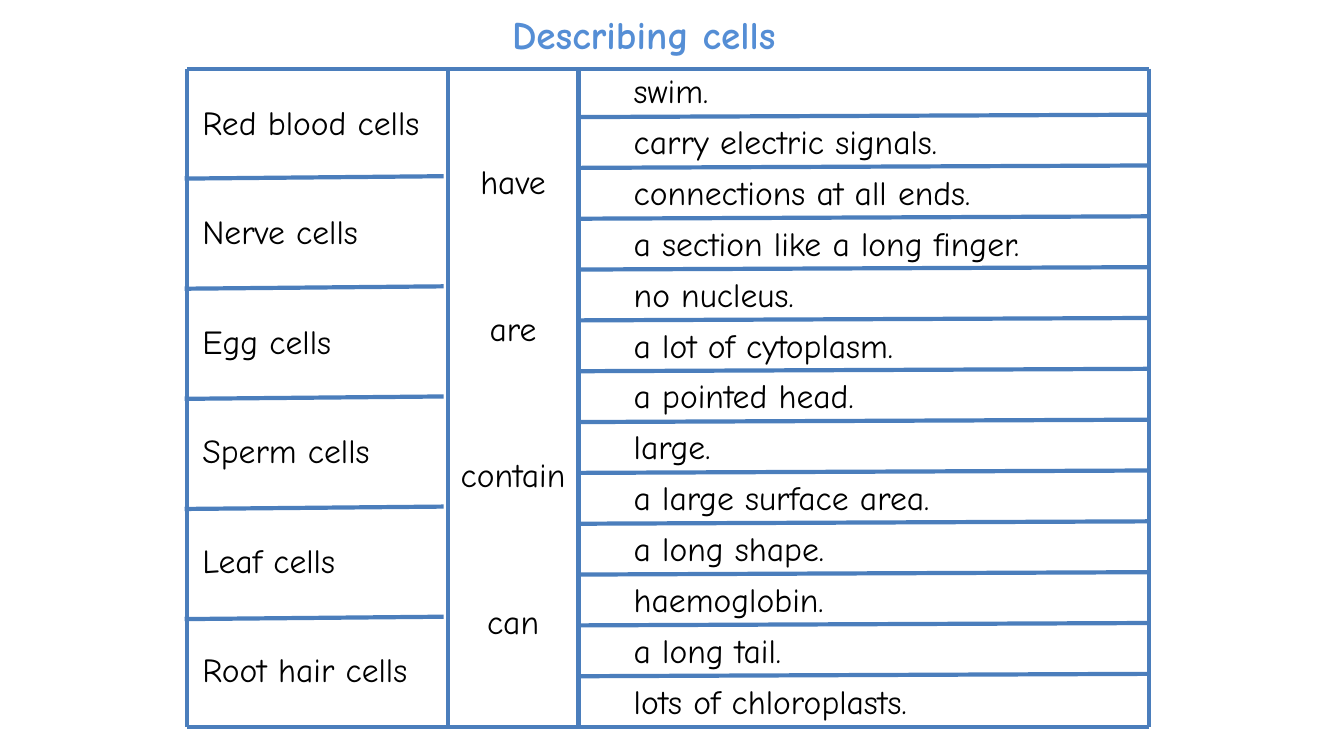
from dataclasses import dataclass

from lxml import etree
from pptx import Presentation
from pptx.dml.color import RGBColor
from pptx.enum import shapes, text
from pptx.oxml import ns
from pptx.util import Cm, Pt

FONT = "Comic Neue"
BLACK, LINE_BLUE, TITLE_BLUE = "000000", "4B7EBC", "558ED5"
TOP, BOTTOM = 1.73, 18.31
COLUMN_EDGES = (4.72, 11.28, 14.58, 28.96)
DIVIDER_RISE = 0.06


@dataclass
class WordColumn:
    """Phrases spaced evenly between a first and a last top, in cm."""
    left: float
    width: float
    first_top: float
    last_top: float
    phrases: list[str]
    alignment: text.PP_ALIGN = text.PP_ALIGN.LEFT


@dataclass
class Dividers:
    """Slightly rising rules between the rows of a column, in cm."""
    left: float
    right: float
    first_y: float
    last_y: float
    count: int


COLUMNS = [
    WordColumn(4.85, 6.73, 2.44, 16.23, [
        "Red blood cells", "Nerve cells", "Egg cells",
        "Sperm cells", "Leaf cells", "Root hair cells"]),
    WordColumn(11.1, 3.66, 3.94, 15.01,
               ["have", "are", "contain", "can"], text.PP_ALIGN.CENTER),
    WordColumn(15.72, 13.2, 1.63, 17.04, [
        "swim.", "carry electric signals.", "connections at all ends.",
        "a section like a long finger.", "no nucleus.", "a lot of cytoplasm.",
        "a pointed head.", "large.", "a large surface area.", "a long shape.",
        "haemoglobin.", "a long tail.", "lots of chloroplasts."]),
]
DIVIDERS = [
    Dividers(4.65, 11.18, 4.5, 15.6, 5),
    Dividers(14.58, 28.93, 2.95, 17.04, 12),
]


def colour(value: str) -> RGBColor:
    return RGBColor.from_string(value)


def spread(first: float, last: float, count: int) -> list[float]:
    return [first + (last - first) * i / (count - 1) for i in range(count)]


def write(shape, words: str, size: int, font_colour: str,
          alignment: text.PP_ALIGN, bold: bool = False) -> None:
    frame = shape.text_frame
    frame.text = words
    frame.word_wrap = True
    frame.vertical_anchor = text.MSO_ANCHOR.TOP
    frame.auto_size = text.MSO_AUTO_SIZE.SHAPE_TO_FIT_TEXT
    paragraph = frame.paragraphs[0]
    paragraph.alignment = alignment
    paragraph.font.name = FONT
    paragraph.font.size = Pt(size)
    paragraph.font.bold = bold
    paragraph.font.color.rgb = colour(font_colour)


def draw_line(slide, x1: float, y1: float, x2: float, y2: float) -> None:
    line = slide.shapes.add_connector(
        shapes.MSO_CONNECTOR.STRAIGHT, Cm(x1), Cm(y1), Cm(x2), Cm(y2))
    line.line.color.rgb = colour(LINE_BLUE)
    line.line.width = Pt(3)
    etree.SubElement(line._element.spPr, ns.qn("a:effectLst"))


def draw_words(slide, column: WordColumn) -> None:
    tops = spread(column.first_top, column.last_top, len(column.phrases))
    for phrase, top in zip(column.phrases, tops):
        box = slide.shapes.add_textbox(
            Cm(column.left), Cm(top), Cm(column.width), Cm(1.27))
        write(box, phrase, 24, BLACK, column.alignment)


def draw_dividers(slide, rules: Dividers) -> None:
    for y in spread(rules.first_y, rules.last_y, rules.count):
        draw_line(slide, rules.left, y, rules.right, y - DIVIDER_RISE)


def main() -> None:
    presentation = Presentation()
    presentation.slide_width, presentation.slide_height = Cm(33.87), Cm(19.05)
    slide = presentation.slides.add_slide(presentation.slide_layouts[5])

    # Title
    title = slide.shapes.title
    title.left, title.top = Cm(12.65), Cm(0.13)
    title.width, title.height = Cm(8.69), Cm(1.45)
    write(title, "Describing cells", 28, TITLE_BLUE, text.PP_ALIGN.LEFT, True)

    # Frame and column edges
    for x in COLUMN_EDGES:
        draw_line(slide, x, TOP, x, BOTTOM)
    for y in (TOP, BOTTOM):
        draw_line(slide, COLUMN_EDGES[0], y, COLUMN_EDGES[-1], y)

    # Words and row dividers
    for column in COLUMNS:
        draw_words(slide, column)
    for rules in DIVIDERS:
        draw_dividers(slide, rules)

    presentation.save("out.pptx")


if __name__ == "__main__":
    main()
